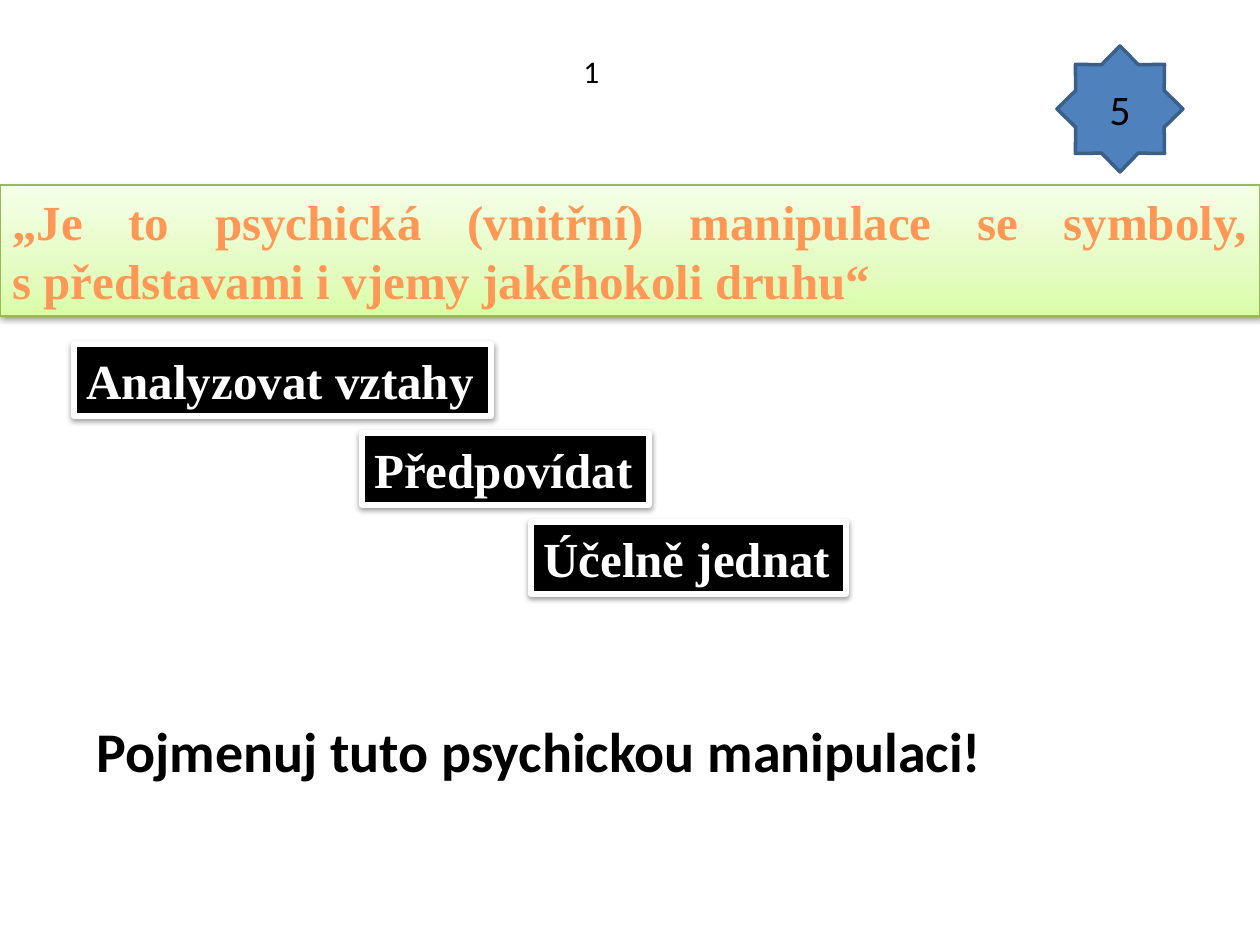
"""Build a quiz slide with a definition banner, three stepped hints and a task."""
from copy import deepcopy
from lxml import etree
from pptx import Presentation
from pptx import util as u
from pptx.dml.color import RGBColor
from pptx.enum import shapes, text
from pptx.oxml.ns import qn

PX = 914400 / 126
NBSP = chr(160)
BLACK = RGBColor(0x00, 0x00, 0x00)
WHITE = RGBColor(0xFF, 0xFF, 0xFF)
BLUE = RGBColor(0x4F, 0x81, 0xBD)
NAVY = RGBColor(0x3A, 0x5F, 0x8B)
GREEN = RGBColor(0x98, 0xB9, 0x55)
LIME = [(0, RGBColor(0xDA, 0xFD, 0xA7)), (0.35, RGBColor(0xE4, 0xFC, 0xC2)),
        (1, RGBColor(0xF5, 0xFF, 0xE7))]
ORANGE = [(0, RGBColor(0x9D, 0x47, 0x00)), (0.78, RGBColor(0xFF, 0x98, 0x56)),
          (1, RGBColor(0xFF, 0xF5, 0xF1))]

prs = Presentation()
prs.slide_width, prs.slide_height = u.Inches(10), u.Inches(7.5)
s = prs.slides.add_slide(prs.slide_layouts[6])


def add_item(kind, box, words, size, font, color, bold=False, wrap=False,
             align=text.PP_ALIGN.LEFT):
    box = [u.Emu(round(v * PX)) for v in box]
    sp = s.shapes.add_shape(kind, *box) if kind else s.shapes.add_textbox(*box)
    sp.shadow.inherit = False
    tf = sp.text_frame
    tf.word_wrap = wrap
    p = tf.paragraphs[0]
    p.alignment = align
    r = p.add_run()
    r.text = words
    r.font.size, r.font.name, r.font.bold = u.Pt(size), font, bold
    r.font.color.rgb = color
    return sp


def set_gradient(fill, element, stops, angle):
    fill.gradient()
    fill.gradient_angle = angle
    stop_list = element.find(".//" + qn("a:gsLst"))
    stop_list.append(deepcopy(stop_list[-1]))
    for stop, (position, color) in zip(fill.gradient_stops, stops):
        stop.position = position
        stop.color.rgb = color


RECT = shapes.MSO_SHAPE.RECTANGLE
banner = add_item(RECT, (0, 185, 1260, 131),
                  "„Je to psychická (vnitřní) manipulace se symboly, "
                  f"s{NBSP}představami i vjemy jakéhokoli druhu“",
                  28, "Times New Roman", ORANGE[1][1], True, True,
                  text.PP_ALIGN.JUSTIFY)
set_gradient(banner.fill, banner.element.spPr, LIME, 90)
r = banner.text_frame.paragraphs[0].runs[0]
set_gradient(r.font.fill, banner.element.txBody, ORANGE, 270)
banner.line.color.rgb = GREEN
banner.line.width = u.Pt(0.75)

raised = [banner]
hints = [("Analyzovat vztahy", 74, 417), ("Předpovídat", 362, 287),
         ("Účelně jednat", 531, 315)]
for i, (words, left, width) in enumerate(hints):
    sp = add_item(RECT, (left, 344 + 89 * i, width, 72), words,
                  28, "Times New Roman", WHITE, True)
    sp.fill.solid()
    sp.fill.fore_color.rgb = BLACK
    sp.line.color.rgb = WHITE
    sp.line.width = u.Pt(3)
    raised.append(sp)

for sp in raised:
    sp.text_frame.auto_size = text.MSO_AUTO_SIZE.SHAPE_TO_FIT_TEXT
    sp.text_frame.vertical_anchor = text.MSO_ANCHOR.TOP
    effects = sp.element.spPr.find(qn("a:effectLst"))
    shadow = etree.SubElement(effects, qn("a:outerShdw"), blurRad="40000",
                              dist="20000", dir="5400000", rotWithShape="0")
    tint = etree.SubElement(shadow, qn("a:srgbClr"), val="000000")
    etree.SubElement(tint, qn("a:alpha"), val="38000")

task = add_item(None, (84, 710, 919, 81), "Pojmenuj tuto psychickou manipulaci!",
                32, "Calibri", BLACK, True)
star = add_item(shapes.MSO_SHAPE.STAR_8_POINT, (1057, 46, 126, 126), "5",
                24, "Calibri", BLACK, wrap=True, align=text.PP_ALIGN.CENTER)
star.adjustments[0] = 0.38
star.text_frame.margin_top = star.text_frame.margin_bottom = 0
star.fill.solid()
star.fill.fore_color.rgb = BLUE
star.line.color.rgb = NAVY
star.line.width = u.Pt(2)
number = add_item(None, (571, 46, 42, 50), "1", 18, "Calibri", BLACK)
for sp in (task, number):
    sp.text_frame.auto_size = text.MSO_AUTO_SIZE.SHAPE_TO_FIT_TEXT

prs.save("out.pptx")
